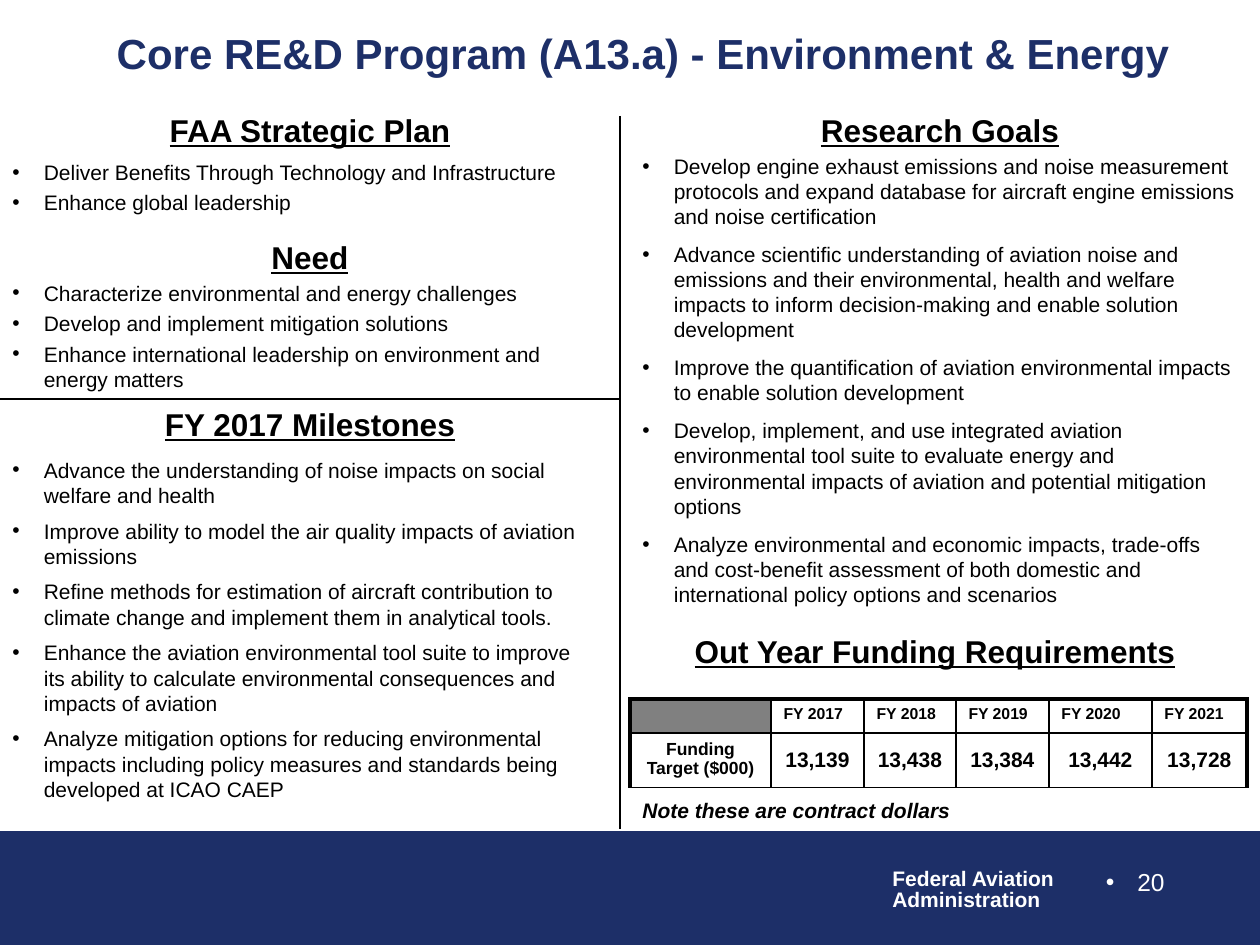
from lxml.etree import SubElement
from pptx import Presentation
from pptx.dml.color import RGBColor
from pptx.enum.shapes import MSO_CONNECTOR, MSO_SHAPE
from pptx.enum.text import MSO_ANCHOR, PP_ALIGN
from pptx.oxml.ns import qn
from pptx.util import Emu, Pt

PX = 914400 // 126
WIDTH, HEIGHT = 1260, 945
NAVY, BLACK, WHITE, GRAY = "1D2F68", "000000", "FFFFFF", "808080"
FONT = "Arial"
MIDDLE = 620  # x of the vertical divider

TITLE = "Core RE&D Program (A13.a) - Environment & Energy"

# Headings: text, left, top, width
HEADINGS = [
    ("FAA Strategic Plan", 0, 105, MIDDLE),
    ("Need", 0, 232, MIDDLE),
    ("FY 2017 Milestones", 0, 399, MIDDLE),
    ("Research Goals", MIDDLE, 105, WIDTH - MIDDLE),
    ("Out Year Funding Requirements", MIDDLE - 5, 626, WIDTH - MIDDLE),
]

# Bullet lists: left, top, width, height, space before in points, items
LISTS = [
    (0, 153, 609, 69, 3, [
        "Deliver Benefits Through Technology and Infrastructure",
        "Enhance global leadership",
    ]),
    (0, 274, 609, 125, 3, [
        "Characterize environmental and energy challenges",
        "Develop and implement mitigation solutions",
        "Enhance international leadership on environment and energy matters",
    ]),
    (0, 451, 609, 407, 6, [
        "Advance the understanding of noise impacts on social welfare and health",
        "Improve ability to model the air quality impacts of aviation emissions",
        "Refine methods for estimation of aircraft contribution to climate change "
        "and implement them in analytical tools.",
        "Enhance the aviation environmental tool suite to improve its ability to "
        "calculate environmental consequences and impacts of aviation",
        "Analyze mitigation options for reducing environmental impacts including "
        "policy measures and standards being developed at ICAO CAEP",
    ]),
    (630, 147, 620, 512, 7.2, [
        "Develop engine exhaust emissions and noise measurement protocols and "
        "expand database for aircraft engine emissions and noise certification",
        "Advance scientific understanding of aviation noise and emissions and "
        "their environmental, health and welfare impacts to inform "
        "decision-making and enable solution development",
        "Improve the quantification of aviation environmental impacts to enable "
        "solution development",
        "Develop, implement, and use integrated aviation environmental tool suite "
        "to evaluate energy and environmental impacts of aviation and potential "
        "mitigation options",
        "Analyze environmental and economic impacts, trade-offs and cost-benefit "
        "assessment of both domestic and international policy options and scenarios",
    ]),
]

FUNDING = [
    ["", "FY 2017", "FY 2018", "FY 2019", "FY 2020", "FY 2021"],
    ["Funding Target ($000)", "13,139", "13,438", "13,384", "13,442", "13,728"],
]
COLUMNS = [141, 93, 92, 93, 103, 95]
ROWS = [34, 54]


def px(*values):
    return [Emu(value * PX) for value in values]


def color(value):
    return RGBColor.from_string(value)


def add_bullet(para):
    properties = para._p.get_or_add_pPr()
    properties.set("marL", "228600")
    properties.set("indent", "-228600")
    SubElement(properties, qn("a:buFont"), typeface=FONT)
    SubElement(properties, qn("a:buChar"), char="•")


def write(frame, lines, size, ink=BLACK, align=PP_ALIGN.LEFT, gap=0, spacing=None,
          bullet=False, **style):
    for index, line in enumerate(lines):
        para = frame.add_paragraph() if index else frame.paragraphs[0]
        if bullet:
            add_bullet(para)
        para.alignment = align
        if index and gap:
            para.space_before = Pt(gap)
        if spacing:
            para.line_spacing = spacing
        span = para.add_run()
        span.text = line
        span.font.name, span.font.size = FONT, Pt(size)
        span.font.color.rgb = color(ink)
        for name, value in style.items():
            setattr(span.font, name, value)


def add_text(page, place, lines, size, anchor=MSO_ANCHOR.TOP, **options):
    box = page.shapes.add_textbox(*px(*place))
    box.text_frame.word_wrap = True
    box.text_frame.vertical_anchor = anchor
    write(box.text_frame, lines, size, **options)


def add_divider(page, *ends):
    line = page.shapes.add_connector(MSO_CONNECTOR.STRAIGHT, *px(*ends))
    line.line.color.rgb = color(BLACK)
    line.line.width = Pt(0.75)
    SubElement(line._element.spPr, qn("a:effectLst"))


def add_borders(cell, widths):
    properties = cell._tc.get_or_add_tcPr()
    for side, width in widths.items():
        border = SubElement(properties, qn(f"a:ln{side}"), w=str(Pt(width)))
        fill = SubElement(border, qn("a:solidFill"))
        SubElement(fill, qn("a:srgbClr"), val=BLACK)


def add_funding(page):
    place = px(630, 699, sum(COLUMNS), sum(ROWS))
    table = page.shapes.add_table(len(ROWS), len(COLUMNS), *place).table
    table.first_row = table.horz_banding = False
    for column, width in zip(table.columns, px(*COLUMNS)):
        column.width = width
    for row, height in zip(table.rows, px(*ROWS)):
        row.height = height
    thick, thin = 2.25, 1
    last = len(COLUMNS) - 1
    for r, texts in enumerate(FUNDING):
        for c, text in enumerate(texts):
            cell = table.cell(r, c)
            add_borders(cell, {
                "L": thin if c else thick,
                "R": thick if c == last else thin,
                "T": thin if r else thick,
                "B": thin,
            })
            if not text:
                cell.fill.solid()
                cell.fill.fore_color.rgb = color(GRAY)
                # A small empty line keeps the header row at its set height
                para = cell.text_frame.paragraphs[0]
                SubElement(para._p, qn("a:endParaRPr"), sz="900")
                continue
            cell.fill.background()
            is_value = r > 0 and c > 0
            cell.vertical_anchor = MSO_ANCHOR.MIDDLE if is_value else MSO_ANCHOR.TOP
            size = 12 if is_value else 10 if r else 9
            align = PP_ALIGN.CENTER if r else PP_ALIGN.LEFT
            write(cell.text_frame, [text], size, align=align, bold=True)


def main():
    deck = Presentation()
    deck.slide_width, deck.slide_height = px(WIDTH, HEIGHT)
    page = deck.slides.add_slide(deck.slide_layouts[6])

    # Footer band with agency name and page number
    band = page.shapes.add_shape(MSO_SHAPE.RECTANGLE, *px(0, 832, WIDTH, 112))
    band.shadow.inherit = False
    band.fill.solid()
    band.fill.fore_color.rgb = band.line.color.rgb = color(NAVY)
    band.line.width = Pt(0.75)
    add_text(page, (880, 863, 200, 55), ["Federal Aviation", "Administration"], 12,
             ink=WHITE, spacing=0.85, bold=True)
    add_text(page, (915, 861, 262, 63), ["20"], 14, ink=WHITE,
             align=PP_ALIGN.RIGHT, bullet=True)

    # Title and section headings
    add_text(page, (59, 11, 1168, 84), [TITLE], 24, MSO_ANCHOR.MIDDLE,
             ink=NAVY, align=PP_ALIGN.CENTER, bold=True)
    for text, left, top, width in HEADINGS:
        add_text(page, (left, top, width, 42), [text], 18,
                 align=PP_ALIGN.CENTER, bold=True, underline=True)

    # Section lists
    for *place, gap, items in LISTS:
        add_text(page, place, items, 12, gap=gap, bullet=True)

    # Dividers
    add_divider(page, MIDDLE, 116, MIDDLE, 829)
    add_divider(page, 0, 399, MIDDLE, 399)

    # Funding table and its note
    add_funding(page)
    add_text(page, (630, 791, 336, 38), ["Note these are contract dollars"], 12,
             bold=True, italic=True)

    deck.save("out.pptx")


if __name__ == "__main__":
    main()
